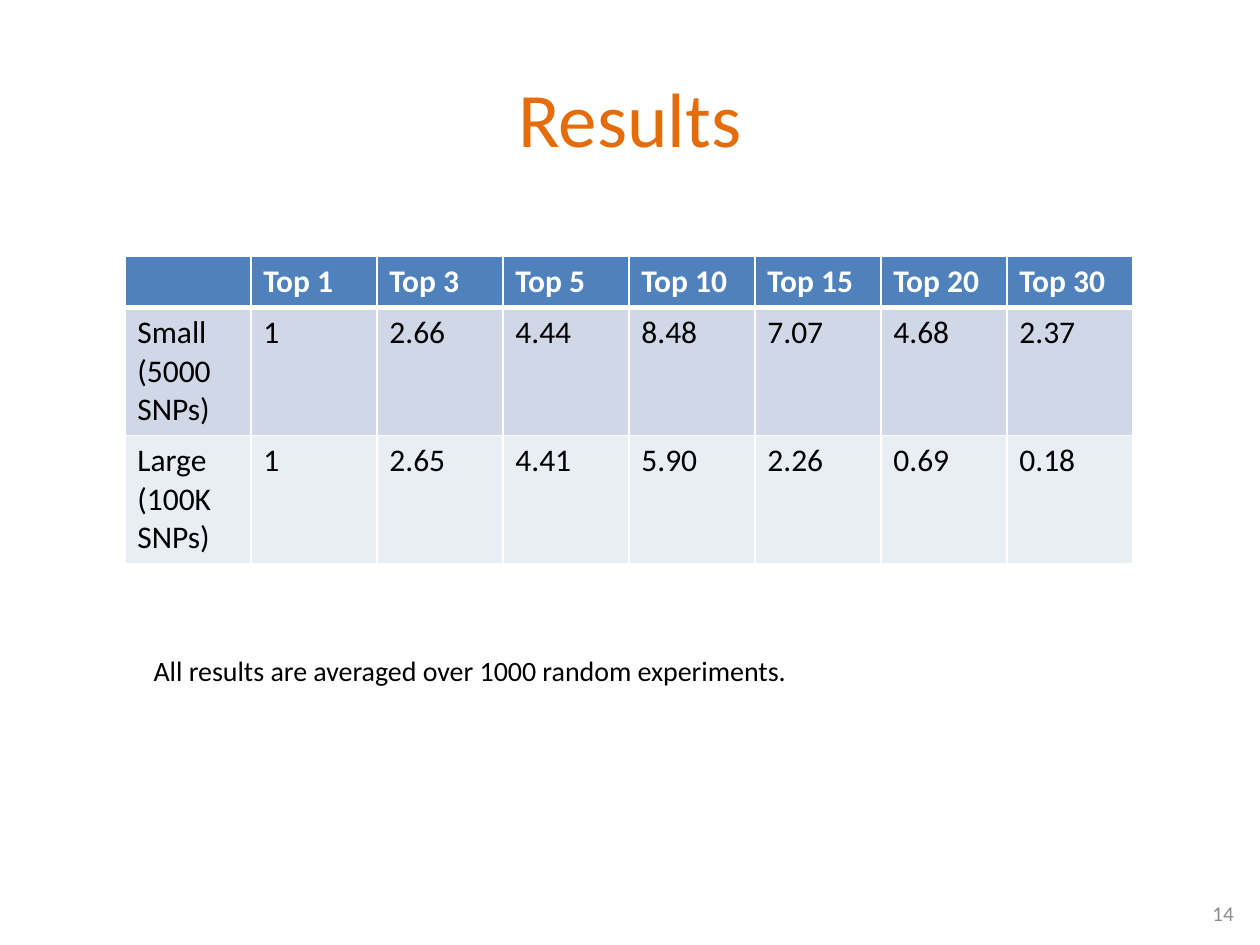
from lxml.etree import SubElement
from pptx import Presentation
from pptx.dml.color import RGBColor
from pptx.enum.text import MSO_ANCHOR, PP_ALIGN
from pptx.oxml.ns import qn
from pptx.util import Inches, Pt

# Content
TITLE = "Results"
HEADER = ["", "Top 1", "Top 3", "Top 5", "Top 10", "Top 15", "Top 20", "Top 30"]
ROWS = [
    ["Small\n(5000 SNPs)", "1", "2.66", "4.44", "8.48", "7.07", "4.68", "2.37"],
    ["Large (100K SNPs)", "1", "2.65", "4.41", "5.90", "2.26", "0.69", "0.18"],
]
NOTE = "All results are averaged over 1000 random experiments."
PAGE = "14"

# Style
FONT = "Calibri"
ORANGE = RGBColor(0xE4, 0x6C, 0x0A)
BLUE = RGBColor(0x4F, 0x81, 0xBD)
BAND_DARK = RGBColor(0xD0, 0xD8, 0xE8)
BAND_LIGHT = RGBColor(0xE9, 0xED, 0xF4)
WHITE = RGBColor(0xFF, 0xFF, 0xFF)
BLACK = RGBColor(0, 0, 0)
GRAY = RGBColor(0x8C, 0x8C, 0x8C)
ROW_FILLS = [BLUE, BAND_DARK, BAND_LIGHT]
ROW_HEIGHTS = [0.41, 1, 1]
COL_WIDTH = 1


def write(tf, text, size, color, bold=False, align=PP_ALIGN.LEFT):
    for i, line in enumerate(text.split("\n")):
        p = tf.add_paragraph() if i else tf.paragraphs[0]
        p.alignment = align
        if not line:
            p.font.size = Pt(size)
            continue
        r = p.add_run()
        r.text = line
        r.font.name, r.font.size, r.font.bold = FONT, Pt(size), bold
        r.font.color.rgb = color


def set_borders(cell, bottom, top):
    tc_pr = cell._tc.get_or_add_tcPr()
    widths = {"a:lnL": 1, "a:lnR": 1, "a:lnT": top, "a:lnB": bottom}
    for i, (tag, width) in enumerate(widths.items()):
        ln = tc_pr.makeelement(qn(tag), {"w": str(Pt(width))})
        fill = SubElement(ln, qn("a:solidFill"))
        SubElement(fill, qn("a:srgbClr"), val=str(WHITE))
        tc_pr.insert(i, ln)  # borders come before the cell fill


def add_text(s, box, text, size, color, align=PP_ALIGN.LEFT, wrap=True):
    tf = s.shapes.add_textbox(*map(Inches, box)).text_frame
    tf.word_wrap = wrap
    write(tf, text, size, color, align=align)
    return tf


prs = Presentation()
prs.slide_width, prs.slide_height = Inches(10), Inches(7.5)
s = prs.slides.add_slide(prs.slide_layouts[5])

# Title
title = s.shapes.title
title.left, title.top, title.width, title.height = map(Inches, (0.5, 0.3, 9, 1.25))
title.text_frame.vertical_anchor = MSO_ANCHOR.MIDDLE
write(title.text_frame, TITLE, 44, ORANGE, align=PP_ALIGN.CENTER)

# Results table
data = [HEADER] + ROWS
table = s.shapes.add_table(
    len(data), len(HEADER), Inches(0.99), Inches(2.03),
    Inches(COL_WIDTH * len(HEADER)), Inches(sum(ROW_HEIGHTS))).table
for col in table.columns:
    col.width = Inches(COL_WIDTH)
for i, (values, fill, height) in enumerate(zip(data, ROW_FILLS, ROW_HEIGHTS)):
    table.rows[i].height = Inches(height)
    is_header = i == 0
    for j, value in enumerate(values):
        cell = table.cell(i, j)
        cell.fill.solid()
        cell.fill.fore_color.rgb = fill
        set_borders(cell, bottom=3 if is_header else 1, top=3 if i == 1 else 1)
        write(cell.text_frame, value, 18, WHITE if is_header else BLACK, is_header)

# Page number and note
tf = add_text(s, (7.56, 7.05, 2.33, 0.4), PAGE, 12, GRAY, PP_ALIGN.RIGHT)
tf.vertical_anchor = MSO_ANCHOR.MIDDLE
add_text(s, (1.12, 5.14, 5.32, 0.37), NOTE, 16, BLACK, wrap=False)

prs.save("out.pptx")
